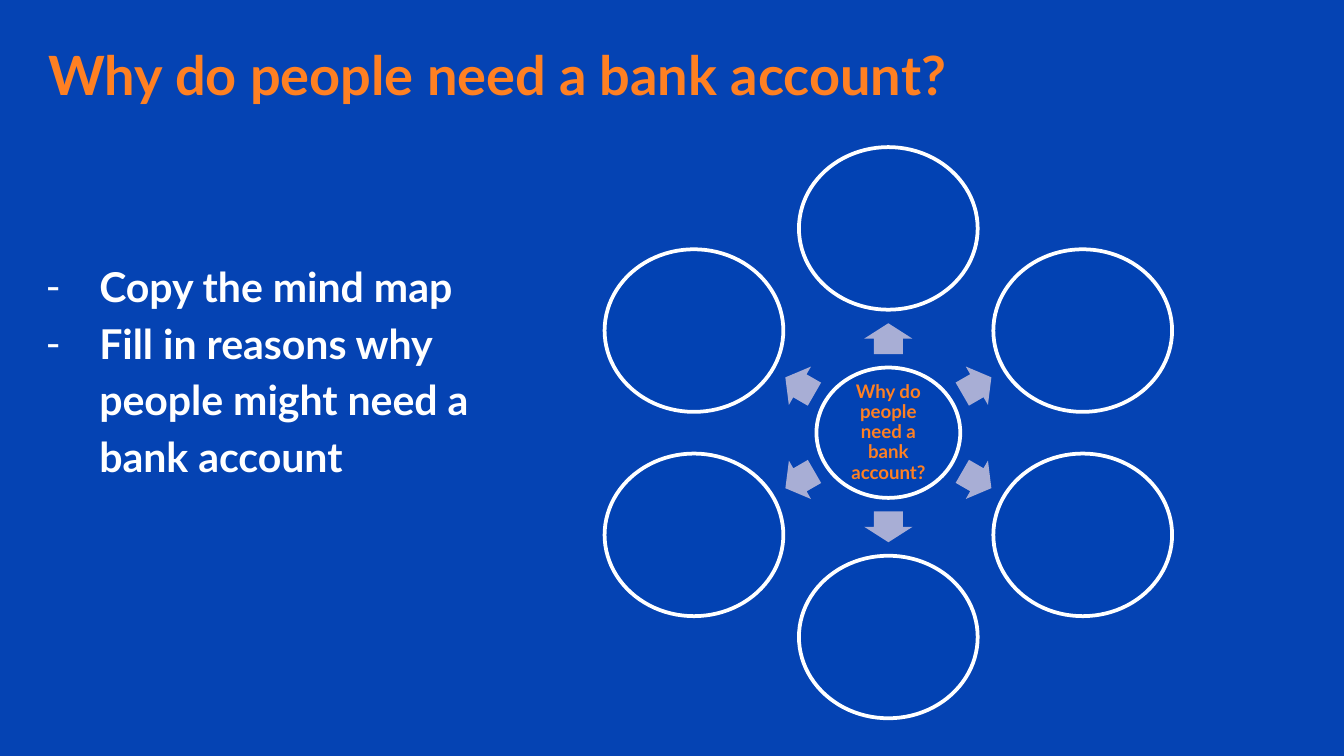
"""Build a slide with a blank six-branch mind map about bank accounts."""
import math
from lxml import etree
from pptx import Presentation
from pptx.dml.color import RGBColor
from pptx.enum import shapes, text
from pptx.oxml.ns import qn
from pptx.util import Inches, Pt

QUESTION = "Why do people need a bank account?"
ORANGE, WHITE, BLUE, LILAC = "FF8022", "FFFFFF", "0242B3", "A8AED5"


def color(value):
    return RGBColor.from_string(value)


def add_centered(kind, x, y, width, height, fill):
    part = slide.shapes.add_shape(kind, Inches(x - width / 2), Inches(y - height / 2),
                                  Inches(width), Inches(height))
    part.shadow.inherit = False
    part.fill.solid()
    part.fill.fore_color.rgb = color(fill)
    if kind == shapes.MSO_SHAPE.OVAL:
        part.line.color.rgb = color(WHITE)
        part.line.width = Pt(2)
    else:
        part.line.fill.background()
    return part


prs = Presentation()
prs.slide_width, prs.slide_height = Inches(10), Inches(10 * 9 / 16)
slide = prs.slides.add_slide(prs.slide_layouts[5])
slide.background.fill.solid()
slide.background.fill.fore_color.rgb = color("0543B3")

title = slide.shapes.title
title.left, title.top, title.width, title.height = map(Inches, (0.26, 0.27, 8.46, 0.56))
title.text_frame.text = QUESTION

center_x, center_y = 6.61, 3.22
hub = add_centered(shapes.MSO_SHAPE.OVAL, center_x, center_y, 1.07, 0.97, BLUE)
hub.text_frame.text = QUESTION

for angle in range(-90, 270, 60):
    across, down = math.cos(math.radians(angle)), math.sin(math.radians(angle))
    length, breadth = (0.23, 0.36) if angle in (-90, 90) else (0.25, 0.33)
    arrow = add_centered(shapes.MSO_SHAPE.RIGHT_ARROW, center_x + 0.76 * across,
                         center_y + 0.7 * down, length, breadth, LILAC)
    arrow.adjustments[0] = 0.6
    arrow.adjustments[1] = 0.5
    arrow.rotation = angle % 360
    add_centered(shapes.MSO_SHAPE.OVAL, center_x + 1.67 * across,
                 center_y + 1.52 * down, 1.33, 1.21, BLUE)

tasks = slide.shapes.add_textbox(Inches(0.14), Inches(1.79), Inches(4.02), Inches(1.85))
tasks.text_frame.text = "Copy the mind map\nFill in reasons why people might need a bank account"
for task in tasks.text_frame.paragraphs:
    properties = task._p.get_or_add_pPr()
    properties.set("marL", str(Inches(0.5)))
    properties.set("indent", str(Inches(-0.4)))
    bullet_color = etree.SubElement(properties, qn("a:buClr"))
    etree.SubElement(bullet_color, qn("a:srgbClr"), val=WHITE)
    etree.SubElement(properties, qn("a:buFont"), typeface="Lato")
    etree.SubElement(properties, qn("a:buChar"), char="-")

left, center = text.PP_ALIGN.LEFT, text.PP_ALIGN.CENTER
top, middle = text.MSO_ANCHOR.TOP, text.MSO_ANCHOR.MIDDLE
for holder, size, ink, align, anchor, spacing, inset in (
    (title, 29, ORANGE, left, middle, 1, 0.1),
    (hub, 10, ORANGE, center, middle, 0.9, 0.01),
    (tasks, 22, WHITE, left, top, 1.15, 0.1),
):
    frame = holder.text_frame
    frame.word_wrap = True
    frame.auto_size = text.MSO_AUTO_SIZE.NONE
    frame.vertical_anchor = anchor
    frame.margin_left = frame.margin_right = Inches(inset)
    frame.margin_top = frame.margin_bottom = Inches(inset)
    for paragraph in frame.paragraphs:
        paragraph.alignment = align
        paragraph.line_spacing = spacing
        for run in paragraph.runs:
            run.font.name = "Lato"
            run.font.size = Pt(size)
            run.font.bold = True
            run.font.color.rgb = color(ink)

prs.save("out.pptx")
